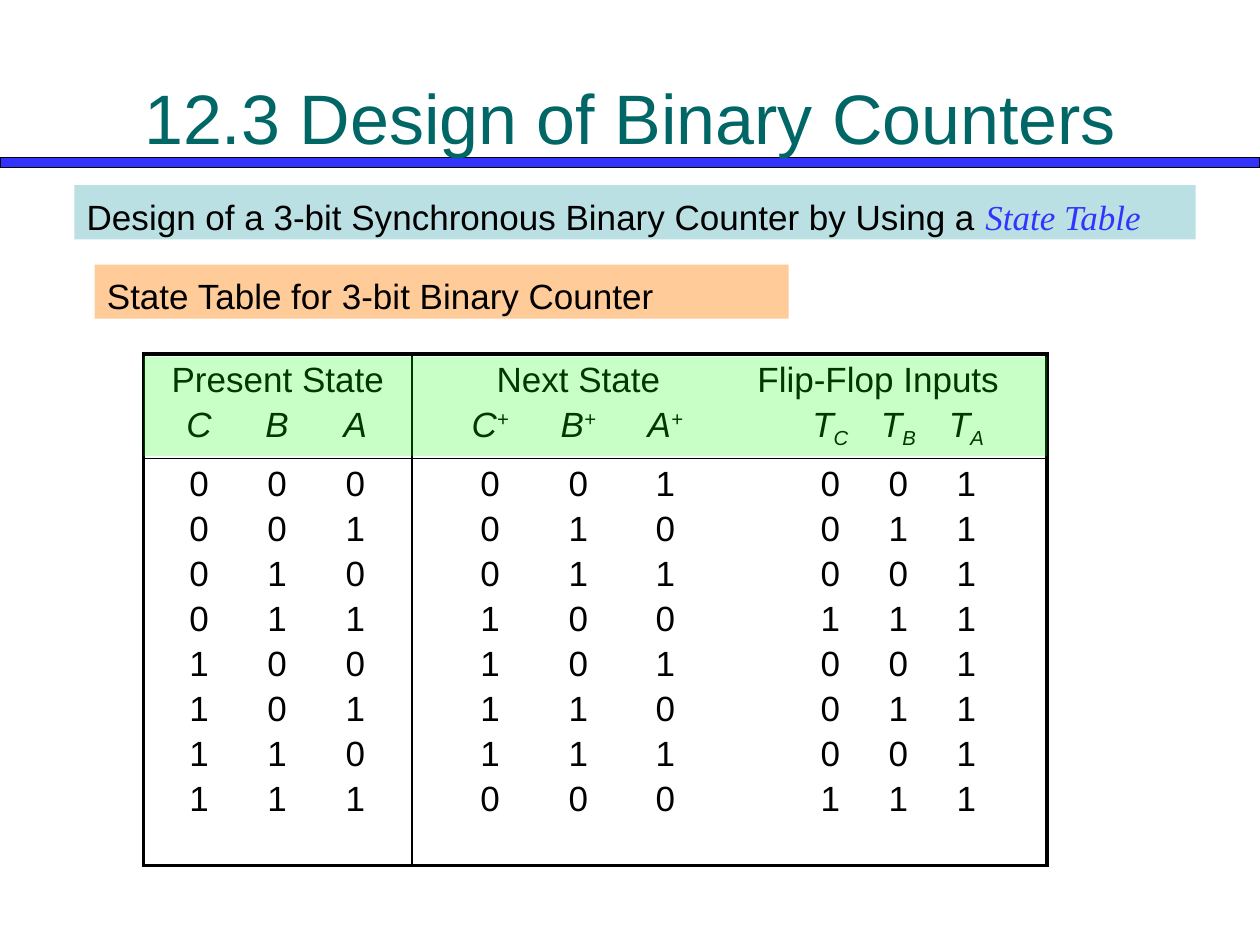
import pptx
import pptx.dml.color
import pptx.enum.shapes
import pptx.enum.text
import pptx.oxml
import pptx.oxml.ns
import pptx.util
from lxml import etree

Inches = pptx.util.Inches
Pt = pptx.util.Pt
qn = pptx.oxml.ns.qn

THICK, THIN = 2.25, 1
STATE_STOPS = [0.34, 0.96, 1.58]
NEXT_STOPS = [0.52, 1.22, 1.91]
INPUT_STOPS = [3.22, 3.76, 4.3]
GROUP_STOPS = [1.22, 3.6]
BITS = 3


def color(hex_text):
    return pptx.dml.color.RGBColor.from_string(hex_text)


class SlideBuilder:
    font_name = "Arial"
    body_size = 20
    text_color = "000000"

    def __init__(self, presentation):
        self.slide = presentation.slides.add_slide(presentation.slide_layouts[5])

    def format_font(self, font, size=None, hex_text=None):
        font.name = self.font_name
        font.size = Pt(size or self.body_size)
        font.color.rgb = color(hex_text or self.text_color)

    def title(self, text, left, top, width, height):
        shape = self.slide.shapes.title
        shape.left, shape.top = Inches(left), Inches(top)
        shape.width, shape.height = Inches(width), Inches(height)
        frame = shape.text_frame
        frame.text = text
        frame.vertical_anchor = pptx.enum.text.MSO_ANCHOR.MIDDLE
        paragraph = frame.paragraphs[0]
        paragraph.alignment = pptx.enum.text.PP_ALIGN.CENTER
        self.format_font(paragraph.font, 40, "006666")

    def rectangle(self, left, top, width, height, fill, line=None, opacity=None):
        shape = self.slide.shapes.add_shape(
            pptx.enum.shapes.MSO_SHAPE.RECTANGLE,
            Inches(left), Inches(top), Inches(width), Inches(height))
        shape.shadow.inherit = False
        shape.fill.solid()
        shape.fill.fore_color.rgb = color(fill)
        if line:
            shape.line.color.rgb = color(line)
            shape.line.width = Pt(0.75)
        else:
            shape.line.fill.background()
        if opacity is not None:
            fill_color = shape.fill._xPr.find(qn("a:solidFill"))[0]
            etree.SubElement(fill_color, qn("a:alpha"), val=str(opacity * 1000))
        return shape

    def send_to_back(self, shape):
        self.slide.shapes._spTree.insert(2, shape._element)

    def banner(self, left, top, width, fill, text):
        shape = self.rectangle(left, top, width, 0.43, fill)
        frame = shape.text_frame
        frame.word_wrap = True
        frame.margin_top = Inches(0.08)
        frame.margin_bottom = Inches(0.02)
        frame.vertical_anchor = pptx.enum.text.MSO_ANCHOR.TOP
        paragraph = frame.paragraphs[0]
        paragraph.alignment = pptx.enum.text.PP_ALIGN.LEFT
        self.format_font(paragraph.font)
        paragraph.add_run().text = text
        return paragraph

    def table(self, left, top, widths, heights):
        table = self.slide.shapes.add_table(
            len(heights), len(widths), Inches(left), Inches(top),
            Inches(sum(widths)), Inches(sum(heights))).table
        table.first_row = table.horz_banding = False
        for column, width in zip(table.columns, widths):
            column.width = Inches(width)
        for row, height in zip(table.rows, heights):
            row.height = Inches(height)
        for i in range(len(heights)):
            for j in range(len(widths)):
                self.cell_borders(table.cell(i, j), {
                    "L": THIN if j else THICK,
                    "R": THICK if j == len(widths) - 1 else THIN,
                    "T": THIN if i else THICK,
                    "B": THICK if i == len(heights) - 1 else THIN})
        return table

    def cell_borders(self, cell, weights):
        properties = cell._tc.get_or_add_tcPr()
        for side, weight in weights.items():
            line = etree.SubElement(properties, qn("a:ln" + side), w=str(Pt(weight)))
            fill = etree.SubElement(line, qn("a:solidFill"))
            etree.SubElement(fill, qn("a:srgbClr"), val=self.text_color)
        cell.fill.background()

    def cell_line(self, cell, entries, stops=None, italic=False):
        """Add one line; each entry is (text, mark, baseline percent), centred on its stop."""
        frame = cell.text_frame
        paragraph = frame.paragraphs[0]
        if paragraph.runs:
            paragraph = frame.add_paragraph()
        paragraph.space_before = Pt(3.4)
        if stops:
            paragraph.alignment = pptx.enum.text.PP_ALIGN.LEFT
            tabs = etree.SubElement(paragraph._p.get_or_add_pPr(), qn("a:tabLst"))
            for stop in stops:
                etree.SubElement(tabs, qn("a:tab"), pos=str(Inches(stop)), algn="ctr")
        else:
            paragraph.alignment = pptx.enum.text.PP_ALIGN.CENTER
        self.format_font(paragraph.font)
        paragraph.font.italic = italic
        for text, mark, baseline in entries:
            paragraph.add_run().text = ("\t" if stops else "") + text
            if mark:
                run = paragraph.add_run()
                run.text = mark
                run.font._element.set("baseline", str(baseline * 1000))


def plain(texts):
    return [(str(text), "", 0) for text in texts]


def bits(number):
    return [int(digit) for digit in f"{number:0{BITS}b}"]


def main():
    presentation = pptx.Presentation()
    presentation.slide_width, presentation.slide_height = Inches(10), Inches(7.5)
    builder = SlideBuilder(presentation)

    # Title and rule
    builder.title("12.3 Design of Binary Counters", 0.5, 0.3, 9, 1.25)
    builder.send_to_back(builder.rectangle(0, 1.25, 10, 0.08, "3333FF", "000000"))

    # Banners
    builder.banner(0.75, 2.1, 5.51, "FFCC99", "State Table for 3-bit Binary Counter")
    topic = builder.banner(0.59, 1.47, 8.9, "BBE0E3",
                           "Design of a 3-bit Synchronous Binary Counter by Using a ")
    emphasis = topic.add_run()
    emphasis.text = "State Table"
    emphasis.font.name = "Times New Roman"
    emphasis.font.italic = True
    emphasis.font.color.rgb = color("3333FF")

    # State table headings
    table = builder.table(1.14, 2.81, [2.13, 5.04], [0.83, 3.23])
    present, following = table.cell(0, 0), table.cell(0, 1)
    builder.cell_line(present, plain(["Present State"]))
    builder.cell_line(present, plain("CBA"), STATE_STOPS, italic=True)
    builder.cell_line(following, plain(["Next State", "Flip-Flop Inputs"]), GROUP_STOPS)
    builder.cell_line(following,
                      [(name, "+", 30) for name in "CBA"]
                      + [("T", name, -25) for name in "CBA"],
                      NEXT_STOPS + INPUT_STOPS, italic=True)

    # Counting rows: a flip-flop toggles where the state bit changes
    for state in range(2 ** BITS):
        next_state = (state + 1) % 2 ** BITS
        builder.cell_line(table.cell(1, 0), plain(bits(state)), STATE_STOPS)
        builder.cell_line(table.cell(1, 1),
                          plain(bits(next_state) + bits(state ^ next_state)),
                          NEXT_STOPS + INPUT_STOPS)

    # Tint over the headings
    builder.rectangle(1.14, 2.83, 7.17, 0.79, "00FF00", opacity=22)

    presentation.save("out.pptx")


if __name__ == "__main__":
    main()
